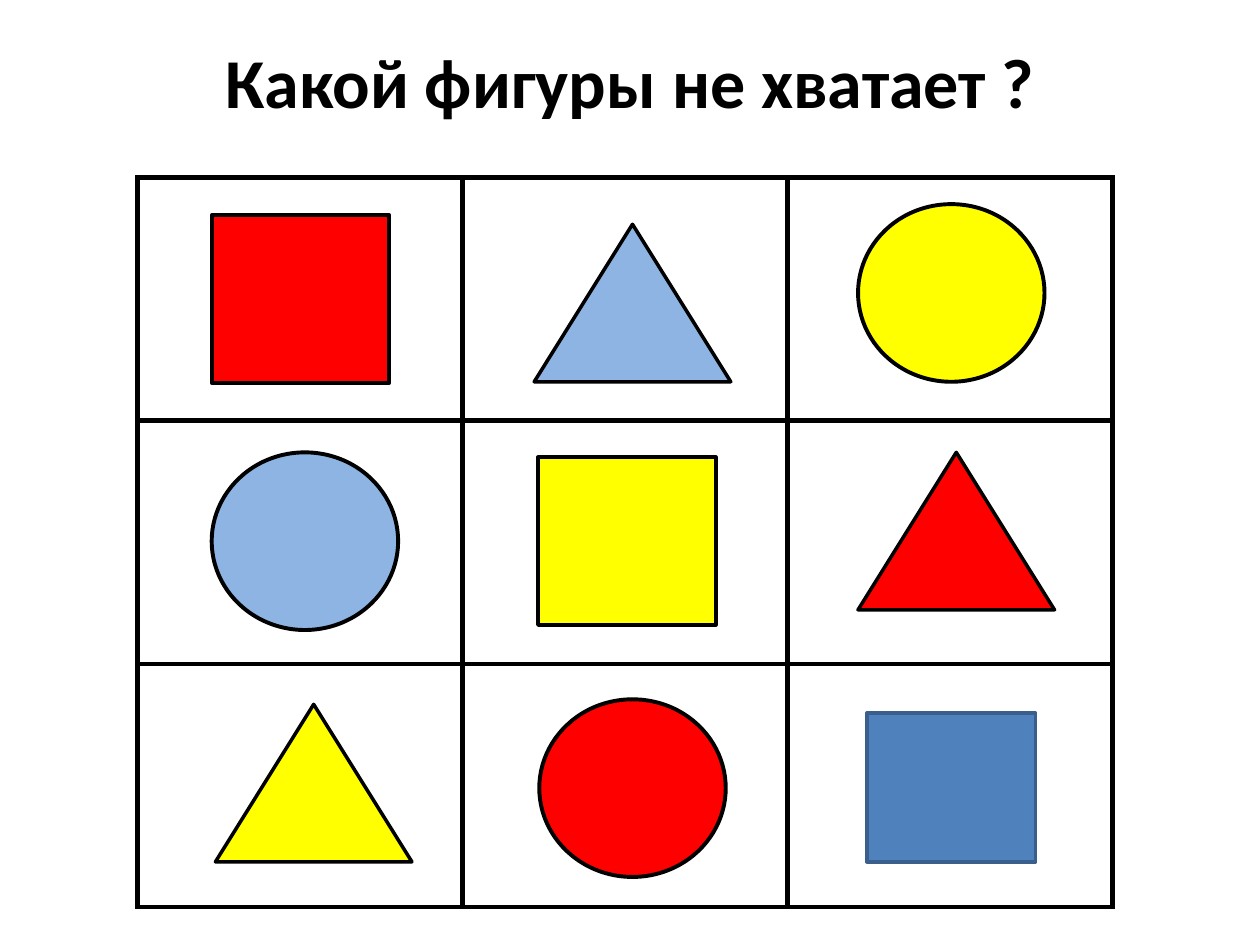
from lxml.etree import SubElement
from pptx import Presentation
from pptx.dml.color import RGBColor
from pptx.enum.shapes import MSO_SHAPE
from pptx.enum.text import PP_ALIGN
from pptx.oxml import parse_xml
from pptx.oxml.ns import nsdecls, qn
from pptx.util import Inches, Pt

COLORS = {
    "black": "000000",
    "red": "FF0000",
    "yellow": "FFFF00",
    "light": "8EB4E3",
    "blue": "4F81BD",
    "navy": "3A5F8C",
}
LEFT, TOP = 1.09, 1.41
COL, ROW = 2.58, 1.93
N = 3

KINDS = {
    "square": (MSO_SHAPE.RECTANGLE, 1.41, 1.33, 2.25),
    "triangle": (MSO_SHAPE.ISOSCELES_TRIANGLE, 1.56, 1.25, 2),
    "circle": (MSO_SHAPE.OVAL, 1.48, 1.41, 2.25),
    "answer": (MSO_SHAPE.RECTANGLE, 1.34, 1.18, 2),
}
FIGURES = [
    [("square", "red", 0.59, 0.30), ("triangle", "light", 0.57, 0.37), ("circle", "yellow", 0.56, 0.21)],
    [("circle", "light", 0.59, 0.25), ("square", "yellow", 0.60, 0.29), ("triangle", "red", 0.56, 0.25)],
    [("triangle", "yellow", 0.62, 0.32), ("circle", "red", 0.61, 0.28), ("answer", "blue", 0.63, 0.39)],
]


def rgb(name):
    return RGBColor.from_string(COLORS[name])


prs = Presentation()
prs.slide_width, prs.slide_height = Inches(10), Inches(7.5)
s = prs.slides.add_slide(prs.slide_layouts[6])

frame = s.shapes.add_table(N, N, Inches(LEFT), Inches(TOP), Inches(N * COL), Inches(N * ROW))
table = frame.table
table.first_row = table.horz_banding = False
for col in table.columns:
    col.width = Inches(COL)
for row in table.rows:
    row.height = Inches(ROW)
for cell in table.iter_cells():
    cell.fill.background()
    tcPr = cell._tc.get_or_add_tcPr()
    for i, side in enumerate("LRTB"):
        ln = parse_xml(f'<a:ln{side} {nsdecls("a")} w="{Pt(3)}"/>')
        fill = SubElement(ln, qn("a:solidFill"))
        SubElement(fill, qn("a:srgbClr"), val=COLORS["black"])
        tcPr.insert(i, ln)

for row, figures in enumerate(FIGURES):
    for col, (kind, color, dx, dy) in enumerate(figures):
        preset, w, h, weight = KINDS[kind]
        x, y = LEFT + col * COL + dx, TOP + row * ROW + dy
        sp = s.shapes.add_shape(preset, Inches(x), Inches(y), Inches(w), Inches(h))
        sp.shadow.inherit = False
        sp.fill.solid()
        sp.fill.fore_color.rgb = rgb(color)
        sp.line.color.rgb = rgb("navy" if kind == "answer" else "black")
        sp.line.width = Pt(weight)

title = s.shapes.add_textbox(Inches(0.31), Inches(0.26), Inches(9.38), Inches(0.77))
tf = title.text_frame
tf.word_wrap = True
p = tf.paragraphs[0]
p.alignment = PP_ALIGN.CENTER
r = p.add_run()
r.text = "Какой фигуры не хватает ?"
r.font.name = "Calibri"
r.font.size = Pt(40)
r.font.bold = True
r.font.color.rgb = rgb("black")

prs.save("out.pptx")
